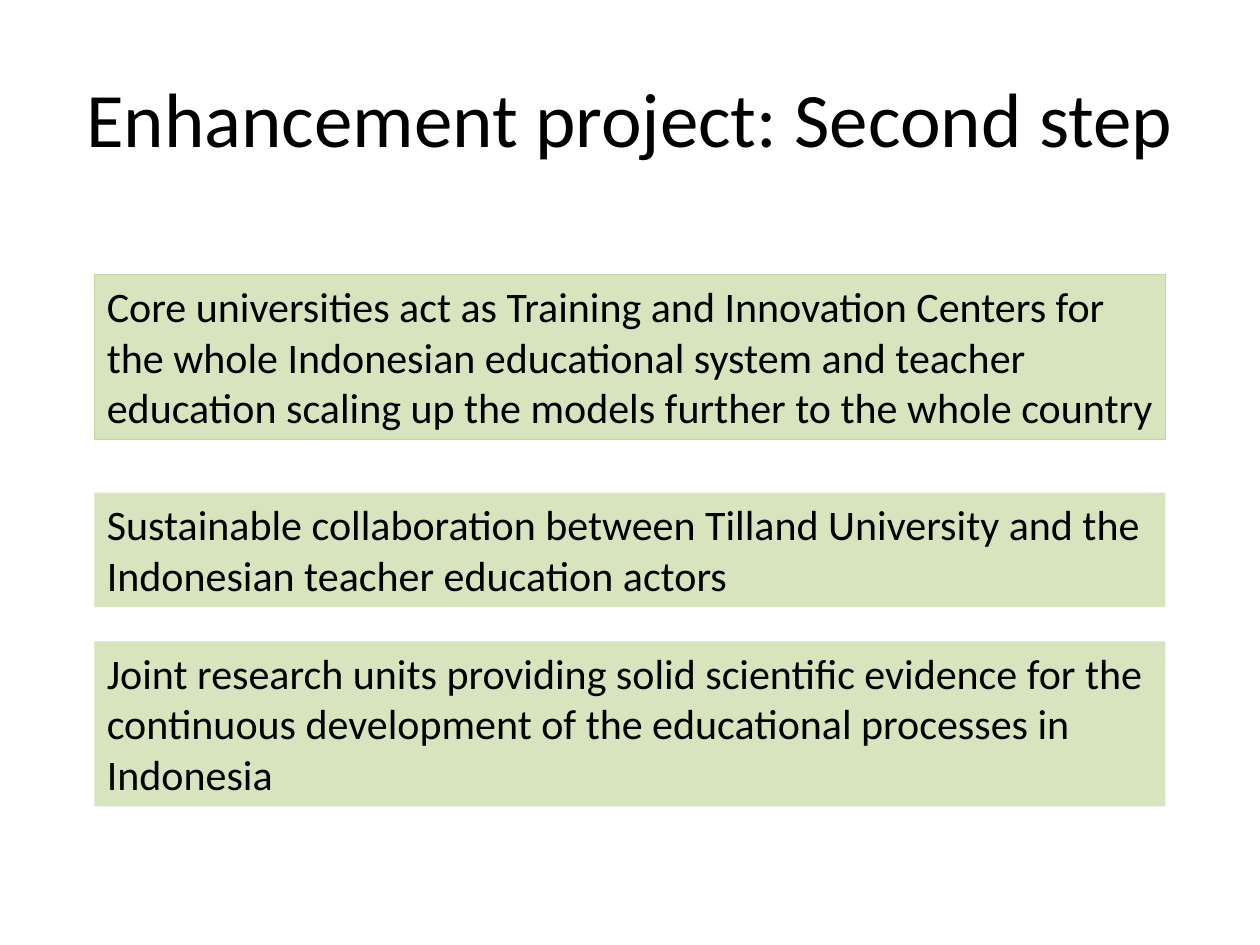
from pptx import Presentation
from pptx.dml.color import RGBColor
from pptx.enum.text import MSO_ANCHOR, MSO_AUTO_SIZE, PP_ALIGN
from pptx.util import Inches, Pt

MIDDLE, TOP = MSO_ANCHOR.MIDDLE, MSO_ANCHOR.TOP
GROW = MSO_AUTO_SIZE.SHAPE_TO_FIT_TEXT
CENTER, LEFT = PP_ALIGN.CENTER, PP_ALIGN.LEFT
BLACK = RGBColor(0x00, 0x00, 0x00)
LIGHT_GREEN = RGBColor(0xD7, 0xE4, 0xBD)
BORDER_GREEN = RGBColor(0xC3, 0xD6, 0x9B)


def format_paragraph(para, size, alignment):
    para.alignment = alignment
    para.font.name = "Calibri"
    para.font.size = Pt(size)
    para.font.color.rgb = BLACK


deck = Presentation()
deck.slide_width, deck.slide_height = Inches(10), Inches(7.5)
slide = deck.slides.add_slide(deck.slide_layouts[5])

# Title
title = slide.shapes.title
title.left, title.top = Inches(0.5), Inches(0.3)
title.width, title.height = Inches(9), Inches(1.25)
title.text_frame.text = "Enhancement project: Second step"
title.text_frame.vertical_anchor = MIDDLE
format_paragraph(title.text_frame.paragraphs[0], 44, CENTER)

# Goal boxes: top, height, border colour, text
goals = [
    (2.18, 1.31, BORDER_GREEN,
     "Core universities act as Training and Innovation Centers for the whole "
     "Indonesian educational system and teacher education scaling up the "
     "models further to the whole country"),
    (3.91, 0.91, None,
     "Sustainable collaboration between Tilland University and the "
     "Indonesian teacher education actors"),
    (5.09, 1.31, None,
     "Joint research units providing solid scientific evidence for the "
     "continuous development of the educational processes in Indonesia"),
]
for top, height, border, text in goals:
    box = slide.shapes.add_textbox(Inches(0.75), Inches(top), Inches(8.5), Inches(height))
    box.fill.solid()
    box.fill.fore_color.rgb = LIGHT_GREEN
    if border:
        box.line.color.rgb = border
        box.line.width = Pt(0.75)
    frame = box.text_frame
    frame.word_wrap = True
    frame.auto_size = GROW
    frame.vertical_anchor = TOP
    # A slightly narrower right margin keeps the longest line whole
    frame.margin_right = Inches(0.05)
    frame.text = text
    format_paragraph(frame.paragraphs[0], 24, LEFT)

deck.save("out.pptx")
